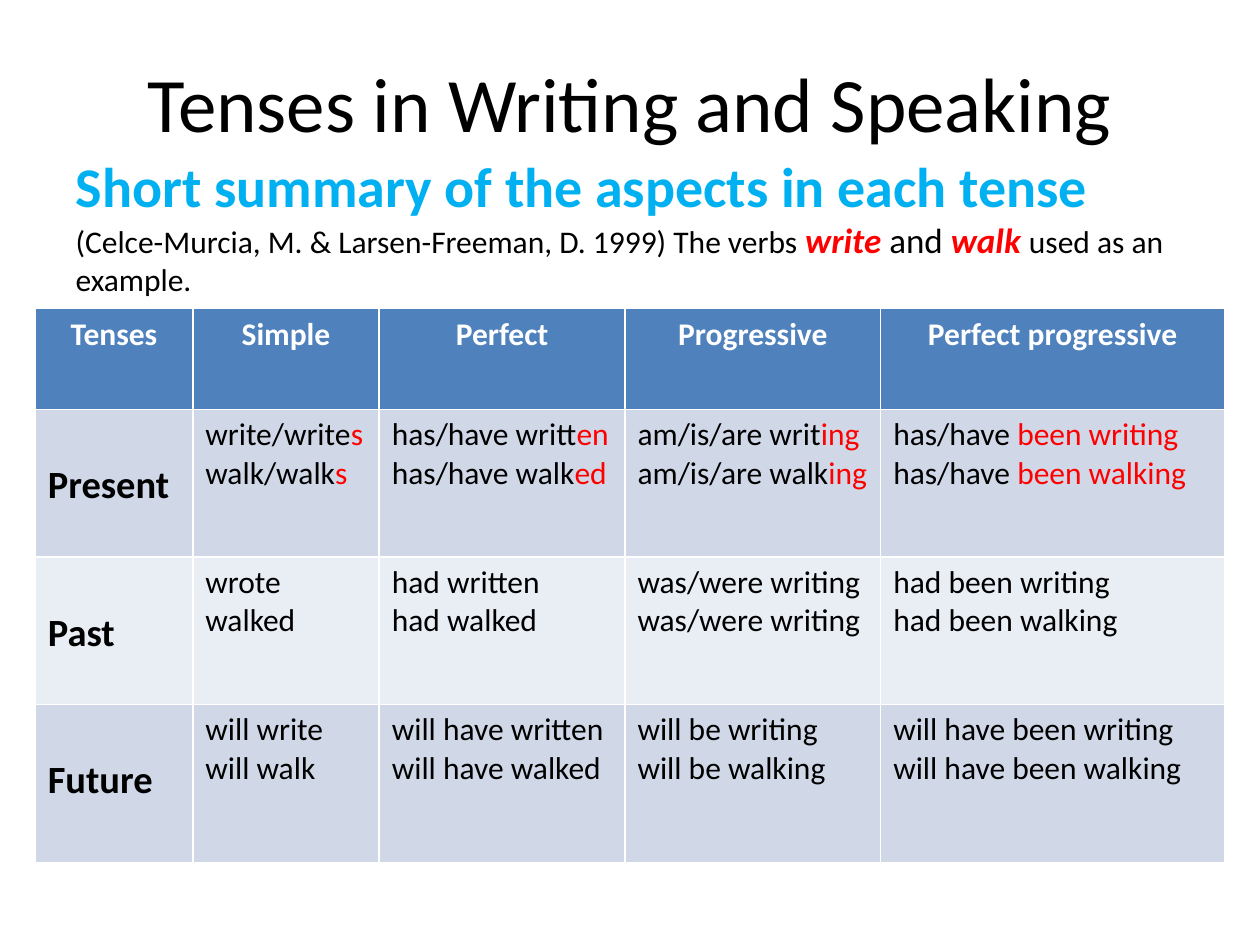
from lxml.etree import SubElement
from pptx import Presentation
from pptx.dml.color import RGBColor
from pptx.enum.text import MSO_ANCHOR, PP_ALIGN
from pptx.oxml.ns import qn
from pptx.util import Inches, Pt

FONT = "Calibri"
BLACK = RGBColor(0x00, 0x00, 0x00)
WHITE = RGBColor(0xFF, 0xFF, 0xFF)
RED = RGBColor(0xFF, 0x00, 0x00)
SKY = RGBColor(0x00, 0xB0, 0xF0)
HEADER_BLUE = RGBColor(0x4F, 0x81, 0xBD)
BANDS = [RGBColor(0xD0, 0xD8, 0xE8), RGBColor(0xE9, 0xED, 0xF4)]

SUMMARY = {"size": Pt(32), "bold": True, "color": SKY}
SOURCE = {"size": Pt(18), "bold": False}
VERB = {"size": Pt(20), "bold": True, "italic": True, "color": RED}
JOINER = {"size": Pt(20), "bold": False}
HEADER = {"size": Pt(18), "bold": True, "color": WHITE}
TENSE = {"size": Pt(22), "bold": True}
FORM = {"size": Pt(18), "bold": False}

COLUMN_WIDTHS = [1.25, 1.48, 1.95, 2.03, 2.73]
ROW_HEIGHTS = [0.8, 1.17, 1.17, 1.26]
ASPECTS = ["Tenses", "Simple", "Perfect", "Progressive", "Perfect progressive"]
# One line per verb; the part after "|" is highlighted.
TENSES = {
    "Present": [
        ["write/write|s", "walk/walk|s"],
        ["has/have writt|en", "has/have walk|ed"],
        ["am/is/are writ|ing", "am/is/are walk|ing"],
        ["has/have |been writing", "has/have |been walking"],
    ],
    "Past": [
        ["wrote", "walked"],
        ["had written", "had walked"],
        ["was/were writing", "was/were writing"],
        ["had been writing", "had been walking"],
    ],
    "Future": [
        ["will write", "will walk"],
        ["will have written", "will have walked"],
        ["will be writing", "will be walking"],
        ["will have been writing", "will have been walking"],
    ],
}


class TenseSlide:
    def __init__(self, presentation):
        self.font = FONT
        self.slide = presentation.slides.add_slide(presentation.slide_layouts[1])

    def add_run(self, paragraph, text, style):
        run = paragraph.add_run()
        run.text = text
        values = {"name": self.font, "color": BLACK, **style}
        run.font.color.rgb = values.pop("color")
        for attribute, value in values.items():
            setattr(run.font, attribute, value)

    def place(self, placeholder, left, top, width, height):
        box = {"left": left, "top": top, "width": width, "height": height}
        for attribute, value in box.items():
            setattr(placeholder, attribute, Inches(value))

    def add_title(self, text, *box):
        title = self.slide.shapes.title
        self.place(title, *box)
        title.text_frame.vertical_anchor = MSO_ANCHOR.MIDDLE
        paragraph = title.text_frame.paragraphs[0]
        paragraph.alignment = PP_ALIGN.CENTER
        self.add_run(paragraph, text, {"size": Pt(44)})

    def add_body(self, pieces, *box):
        """Fill the body with one unbulleted paragraph of (text, style) pieces."""
        body = self.slide.placeholders[1]
        self.place(body, *box)
        paragraph = body.text_frame.paragraphs[0]
        properties = paragraph._p.get_or_add_pPr()
        properties.set("marL", "0")
        properties.set("indent", "0")
        SubElement(properties, qn("a:buNone"))
        for text, style in pieces:
            self.add_run(paragraph, text, style)

    def fill_cell(self, cell, lines, style, fill, alignment=PP_ALIGN.LEFT):
        cell.fill.solid()
        cell.fill.fore_color.rgb = fill
        frame = cell.text_frame
        for index, line in enumerate(lines):
            paragraph = frame.add_paragraph() if index else frame.paragraphs[0]
            paragraph.alignment = alignment
            stem, _, ending = line.partition("|")
            self.add_run(paragraph, stem, style)
            if ending:
                self.add_run(paragraph, ending, {**style, "color": RED})

    def add_tense_table(self, left, top):
        table = self.slide.shapes.add_table(
            len(ROW_HEIGHTS), len(COLUMN_WIDTHS), Inches(left), Inches(top),
            Inches(sum(COLUMN_WIDTHS)), Inches(sum(ROW_HEIGHTS))).table
        for column, width in zip(table.columns, COLUMN_WIDTHS):
            column.width = Inches(width)
        for row, height in zip(table.rows, ROW_HEIGHTS):
            row.height = Inches(height)

        for column, aspect in enumerate(ASPECTS):
            self.fill_cell(table.cell(0, column), [aspect], HEADER,
                           HEADER_BLUE, PP_ALIGN.CENTER)
        for row, (tense, forms) in enumerate(TENSES.items(), start=1):
            band = BANDS[(row - 1) % len(BANDS)]
            label = table.cell(row, 0)
            self.fill_cell(label, [tense], TENSE, band)
            label.margin_top = Inches(0.42)
            for column, lines in enumerate(forms, start=1):
                self.fill_cell(table.cell(row, column), lines, FORM, band)


def main():
    presentation = Presentation()
    presentation.slide_width = Inches(10)
    presentation.slide_height = Inches(7.5)

    slide = TenseSlide(presentation)
    slide.add_title("Tenses in Writing and Speaking", 0.5, 0.3, 9, 1.01)
    slide.add_body([
        ("Short summary of the aspects in each tense ", SUMMARY),
        ("(Celce-Murcia, M. & Larsen-Freeman, D. 1999) The verbs ", SOURCE),
        ("write ", VERB),
        ("and", JOINER),
        (" walk ", VERB),
        ("used as an example.", SOURCE),
    ], 0.5, 1.15, 9, 5.55)
    slide.add_tense_table(0.28, 2.45)
    presentation.save("out.pptx")


if __name__ == "__main__":
    main()
